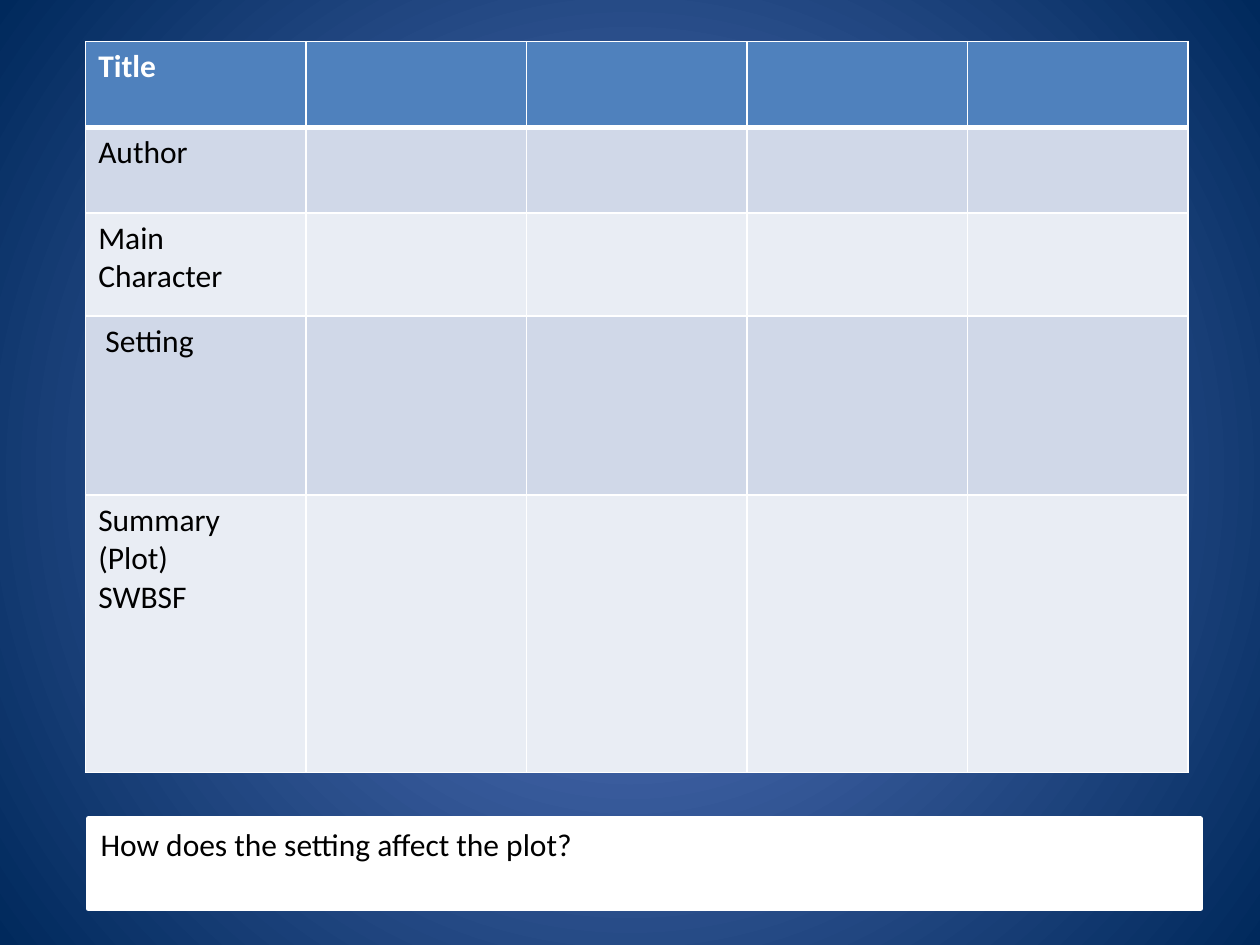
import lxml.etree
import pptx
import pptx.dml.color
import pptx.enum.shapes
import pptx.enum.text
import pptx.oxml.ns
import pptx.util

Inches = pptx.util.Inches
Pt = pptx.util.Pt
RGBColor = pptx.dml.color.RGBColor
WHITE = RGBColor(0xFF, 0xFF, 0xFF)
BLACK = RGBColor(0x00, 0x00, 0x00)
BLUE = RGBColor(0x4F, 0x81, 0xBD)
BANDS = [RGBColor(0xE9, 0xED, 0xF4), RGBColor(0xD0, 0xD8, 0xE8)]
GLOW = RGBColor(0x5E, 0x7C, 0xC5)
NAVY = RGBColor(0x00, 0x29, 0x5C)

FONT = {"name": "Calibri", "size": Pt(18), "bold": False}
PLAIN = dict.fromkeys(["first_row", "horz_banding"], False)
FRAME = {"word_wrap": True, "vertical_anchor": pptx.enum.text.MSO_ANCHOR.TOP}
COLS = 5
WIDTH = 1.75
ROWS = [
    ("Title", 0.68),
    ("Author", 0.68),
    ("Main Character", 0.82),
    (" Setting", 1.42),
    ("Summary\n(Plot)\nSWBSF", 2.2),
]


def apply(item, values):
    for name, value in values.items():
        setattr(item, name, value)


def add(parent, tag, **attrs):
    return lxml.etree.SubElement(parent, pptx.oxml.ns.qn(tag), attrs)


def write(frame, text, color, **extra):
    frame.text = text
    for para in frame.paragraphs:
        para.alignment = pptx.enum.text.PP_ALIGN.LEFT
        apply(para.font, {**FONT, **extra})
        para.font.color.rgb = color


def paint(slide):
    fill = slide.background.fill
    fill.gradient()
    for stop, color in zip(fill.gradient_stops, [GLOW, NAVY]):
        stop.color.rgb = color
    grad = slide.background._cSld.find(".//" + pptx.oxml.ns.qn("a:gradFill"))
    grad.remove(grad.find(pptx.oxml.ns.qn("a:lin")))
    ring = add(grad, "a:path", path="circle")
    add(ring, "a:fillToRect", **dict.fromkeys("ltrb", "50000"))


def edge(cell, row):
    heavy = {0: "B", 1: "T"}.get(row)
    props = cell._tc.get_or_add_tcPr()
    for side in "LRTB":
        width = Pt(3 if side == heavy else 1)
        line = add(props, "a:ln" + side, w=str(width))
        add(add(line, "a:solidFill"), "a:srgbClr", val=str(WHITE))


def add_grid(slide):
    tall = sum(height for label, height in ROWS)
    box = map(Inches, (0.68, 0.33, COLS * WIDTH, tall))
    table = slide.shapes.add_table(len(ROWS), COLS, *box).table
    apply(table, PLAIN)
    for row, (label, height) in enumerate(ROWS):
        table.rows[row].height = Inches(height)
        head = row == 0
        for cell in table.rows[row].cells:
            edge(cell, row)
            cell.fill.solid()
            cell.fill.fore_color.rgb = BLUE if head else BANDS[row % 2]
        write(table.cell(row, 0).text_frame, label,
              WHITE if head else BLACK, bold=head)


def add_ask(slide, text):
    box = map(Inches, (0.7, 6.5, 8.83, 0.71))
    kind = pptx.enum.shapes.MSO_SHAPE.RECTANGLE
    shape = slide.shapes.add_shape(kind, *box)
    shape.shadow.inherit = False
    for fill in (shape.fill, shape.line.fill):
        fill.solid()
        fill.fore_color.rgb = WHITE
    shape.line.width = Pt(3)
    apply(shape.text_frame, FRAME)
    write(shape.text_frame, text, BLACK)


def main():
    deck = pptx.Presentation()
    apply(deck, {"slide_width": Inches(10), "slide_height": Inches(7.5)})
    slide = deck.slides.add_slide(deck.slide_layouts[6])
    paint(slide)
    add_ask(slide, "How does the setting affect the plot?")
    add_grid(slide)
    deck.save("out.pptx")


if __name__ == "__main__":
    main()
